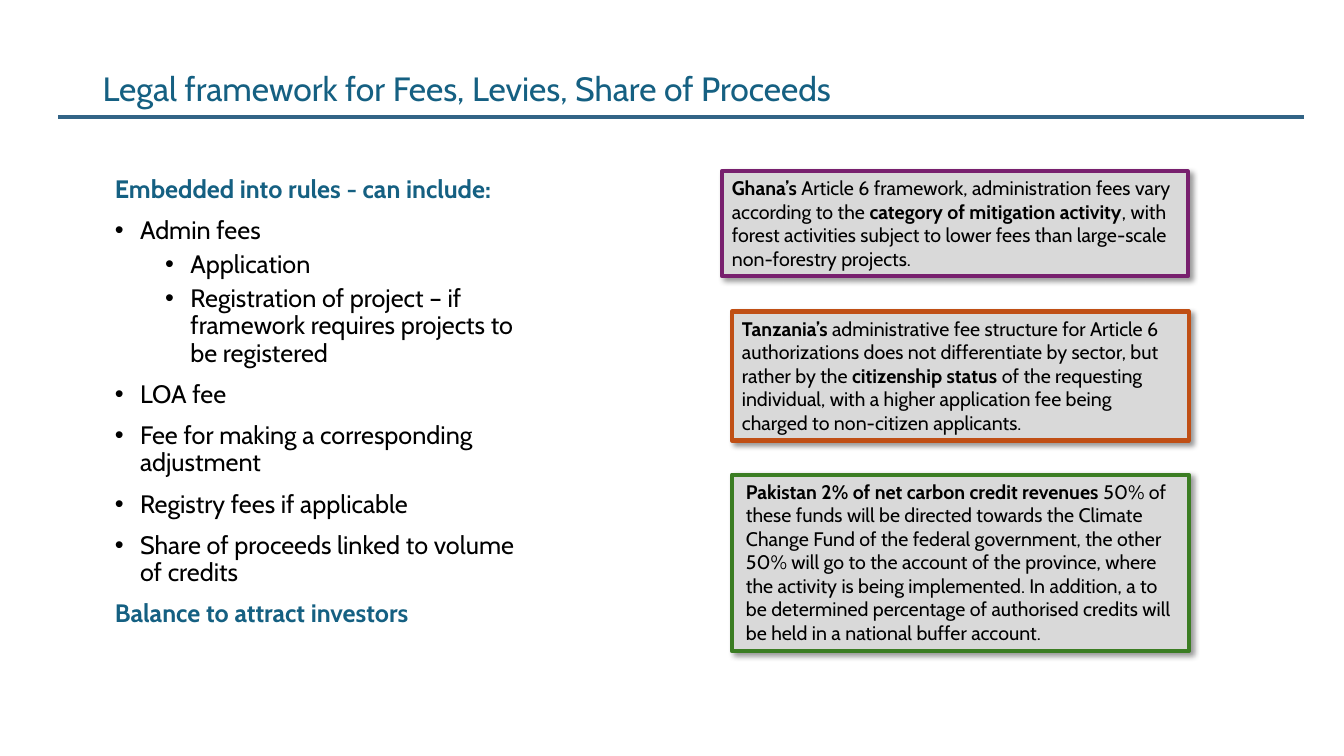
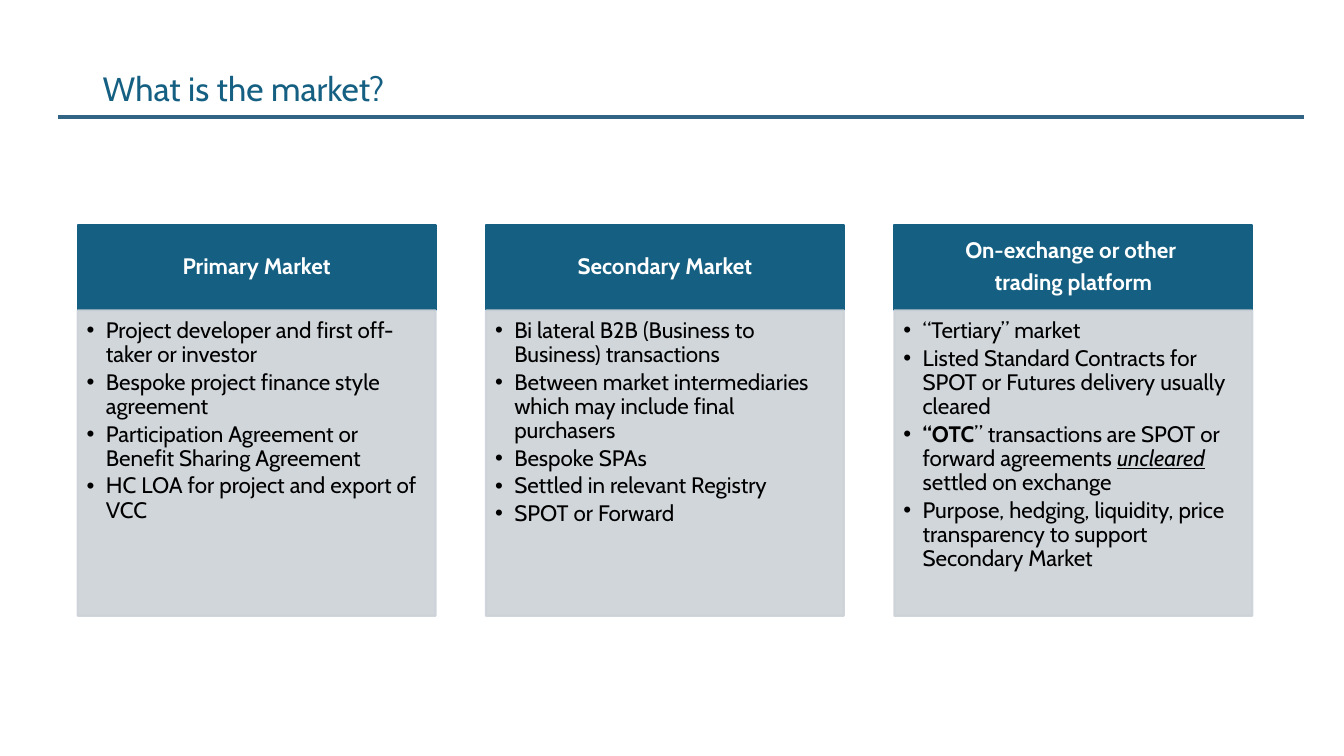
from lxml.etree import SubElement
from pptx import Presentation
from pptx.dml.color import RGBColor
from pptx.enum.shapes import MSO_CONNECTOR, MSO_SHAPE
from pptx.enum.text import MSO_ANCHOR, MSO_AUTO_SIZE, PP_ALIGN
from pptx.oxml.ns import qn
from pptx.util import Inches, Pt

FONT = "Cabin"
COLORS = {
    "blue": "156082",
    "rule": "326486",
    "black": "000000",
    "white": "FFFFFF",
    "card": "D9D9D9",
    "panel": "CCD2D8",
    "purple": "78206E",
    "orange": "C04F15",
    "green": "3B7D23",
}

FEE_LINES = [
    ("heading", "Embedded into rules - can include:"),
    ("item", "Admin fees"),
    ("subitem", "Application"),
    ("subitem", "Registration of project – if framework requires projects to be registered"),
    ("item", "LOA fee"),
    ("item", "Fee for making a corresponding adjustment"),
    ("item", "Registry fees if applicable"),
    ("item", "Share of proceeds linked to volume of credits"),
    ("heading", "Balance to attract investors"),
]

FEE_STYLES = {
    "heading": {"color": "blue", "style": "b", "before": 10},
    "item": {"indent": 0.25, "bullet": True, "before": 10},
    "subitem": {"indent": 0.75, "bullet": True, "before": 5},
}

COUNTRY_CARDS = [
    ("purple", (7.16, 1.7, 4.62, 1.04), 0, [
        ("Ghana’s", "b"),
        (" Article 6 framework, administration fees vary according to the ", ""),
        ("category of mitigation activity", "b"),
        (", with forest activities subject to lower fees than large-scale "
         "non-forestry projects.", ""),
    ]),
    ("orange", (7.26, 3.09, 4.53, 1.28), 0, [
        ("Tanzania’s", "b"),
        (" administrative fee structure for Article 6 authorizations does not "
         "differentiate by sector, but rather by the ", ""),
        ("citizenship status ", "b"),
        ("of the requesting individual, with a higher application fee being "
         "charged to non-citizen applicants.", ""),
    ]),
    ("green", (7.26, 4.71, 4.53, 1.75), 0.04, [
        ("Pakistan 2% of net carbon credit revenues ", "b"),
        ("50% of these funds will be directed towards the Climate Change Fund of "
         "the federal government, the other 50% will go to the account of the "
         "province, where the activity is being implemented. In addition, a to be "
         "determined percentage of authorised credits will be held in a national "
         "buffer account.", ""),
    ]),
]

MARKETS = [
    (["Primary Market"], [
        "Project developer and first off-taker or investor",
        "Bespoke project finance style agreement",
        "Participation Agreement or Benefit Sharing Agreement",
        "HC LOA for project and export of VCC",
    ]),
    (["Secondary Market"], [
        "Bi lateral B2B (Business to Business) transactions",
        "Between market intermediaries which may include final purchasers",
        "Bespoke SPAs",
        "Settled in relevant Registry",
        "SPOT or Forward",
    ]),
    (["On-exchange or other ", "trading platform"], [
        "“Tertiary” market",
        "Listed Standard Contracts for SPOT or Futures delivery usually cleared",
        [("“OTC", "b"), ("” transactions are SPOT or forward agreements ", ""),
         ("uncleared", "iu"), (" settled on exchange", "")],
        "Purpose, hedging, liquidity, price transparency to support Secondary Market",
    ]),
]


def rgb(name):
    return RGBColor.from_string(COLORS[name])


def next_paragraph(text_frame):
    first = text_frame.paragraphs[0]
    return text_frame.add_paragraph() if first.runs else first


def write_paragraph(text_frame, content, size, color="black", style="", indent=0,
                    bullet=False, hanging=0.25, before=0, after=0, spacing=0.9,
                    align=PP_ALIGN.LEFT):
    is_first = not text_frame.paragraphs[0].runs
    paragraph = next_paragraph(text_frame)
    properties = paragraph._p.get_or_add_pPr()
    if indent:
        properties.set("marL", str(Inches(indent)))
    if bullet:
        properties.set("indent", str(-Inches(hanging)))
        SubElement(properties, qn("a:buFont"), typeface="Arial")
        SubElement(properties, qn("a:buChar"), char="•")
    paragraph.alignment = align
    paragraph.line_spacing = spacing
    paragraph.space_before = Pt(0 if is_first else before)
    paragraph.space_after = Pt(after)
    parts = [(content, style)] if isinstance(content, str) else content
    for text, flags in parts:
        run = paragraph.add_run()
        run.text = text
        run.font.name = FONT
        run.font.size = Pt(size)
        run.font.color.rgb = rgb(color)
        run.font.bold = "b" in flags
        run.font.italic = "i" in flags
        run.font.underline = "u" in flags


def add_text_box(slide, box, anchor=MSO_ANCHOR.TOP):
    text_frame = slide.shapes.add_textbox(*map(Inches, box)).text_frame
    text_frame.word_wrap = True
    text_frame.vertical_anchor = anchor
    return text_frame


def add_rectangle(slide, box, fill, line, line_width, anchor=MSO_ANCHOR.TOP):
    shape = slide.shapes.add_shape(MSO_SHAPE.RECTANGLE, *map(Inches, box))
    shape.shadow.inherit = False
    shape.fill.solid()
    shape.fill.fore_color.rgb = rgb(fill)
    shape.line.color.rgb = rgb(line)
    shape.line.width = Pt(line_width)
    shape.text_frame.word_wrap = True
    shape.text_frame.vertical_anchor = anchor
    return shape


def set_insets(text_frame, left, top, right, bottom):
    text_frame.margin_left = Inches(left)
    text_frame.margin_top = Inches(top)
    text_frame.margin_right = Inches(right)
    text_frame.margin_bottom = Inches(bottom)


def add_drop_shadow(shape):
    effects = shape._element.spPr.find(qn("a:effectLst"))
    shadow = SubElement(effects, qn("a:outerShdw"), blurRad=str(Pt(4)),
                        dist=str(Pt(3)), dir="2700000", algn="tl", rotWithShape="0")
    color = SubElement(shadow, qn("a:srgbClr"), val=COLORS["black"])
    SubElement(color, qn("a:alpha"), val="40000")


def set_opacity(shape, percent):
    for color in shape._element.spPr.iter(qn("a:srgbClr")):
        SubElement(color, qn("a:alpha"), val=str(percent * 1000))


def add_titled_slide(presentation, title):
    slide = presentation.slides.add_slide(presentation.slide_layouts[6])
    text_frame = add_text_box(slide, (0.92, 0.4, 11.5, 0.99), MSO_ANCHOR.MIDDLE)
    write_paragraph(text_frame, title, 24, "blue")
    rule = slide.shapes.add_connector(MSO_CONNECTOR.STRAIGHT, Inches(0.58), Inches(1.16),
                                      Inches(12.93), Inches(1.16))
    rule.line.color.rgb = rgb("rule")
    rule.line.width = Pt(3)
    SubElement(rule._element.spPr, qn("a:effectLst"))
    return slide


def add_country_card(slide, color, box, indent, content):
    card = add_rectangle(slide, box, "card", color, 3)
    add_drop_shadow(card)
    card.text_frame.auto_size = MSO_AUTO_SIZE.SHAPE_TO_FIT_TEXT
    write_paragraph(card.text_frame, content, 14, indent=indent, spacing=1.0)


def add_market_column(slide, left, heading_lines, items):
    top, width, heading_height, panel_height = 2.23, 3.55, 0.85, 3.03
    heading = add_rectangle(slide, (left, top, width, heading_height),
                            "blue", "blue", 1.5, MSO_ANCHOR.MIDDLE)
    set_insets(heading.text_frame, 0.12, 0.07, 0.12, 0.07)
    for line in heading_lines:
        write_paragraph(heading.text_frame, line, 16, "white", "b", after=5.6,
                        align=PP_ALIGN.CENTER)
    panel = add_rectangle(slide, (left, top + heading_height, width, panel_height),
                          "panel", "panel", 1.5)
    set_opacity(panel, 90)
    set_insets(panel.text_frame, 0.09, 0.09, 0.12, 0.14)
    for item in items:
        write_paragraph(panel.text_frame, item, 16, indent=0.19, hanging=0.19,
                        bullet=True, after=2.4)


def add_fees_slide(presentation):
    slide = add_titled_slide(presentation,
                             "Legal framework for Fees, Levies, Share of Proceeds")
    text_frame = add_text_box(slide, (1.04, 1.7, 4.39, 4.76))
    for kind, text in FEE_LINES:
        write_paragraph(text_frame, text, 18, **FEE_STYLES[kind])
    for card in COUNTRY_CARDS:
        add_country_card(slide, *card)


def add_market_slide(presentation):
    slide = add_titled_slide(presentation, "What is the market?")
    for index, (heading_lines, items) in enumerate(MARKETS):
        add_market_column(slide, 0.77 + index * 4.05, heading_lines, items)


def main():
    presentation = Presentation()
    presentation.slide_width = Inches(13.33)
    presentation.slide_height = Inches(7.5)
    add_fees_slide(presentation)
    add_market_slide(presentation)
    presentation.save("out.pptx")


if __name__ == "__main__":
    main()
